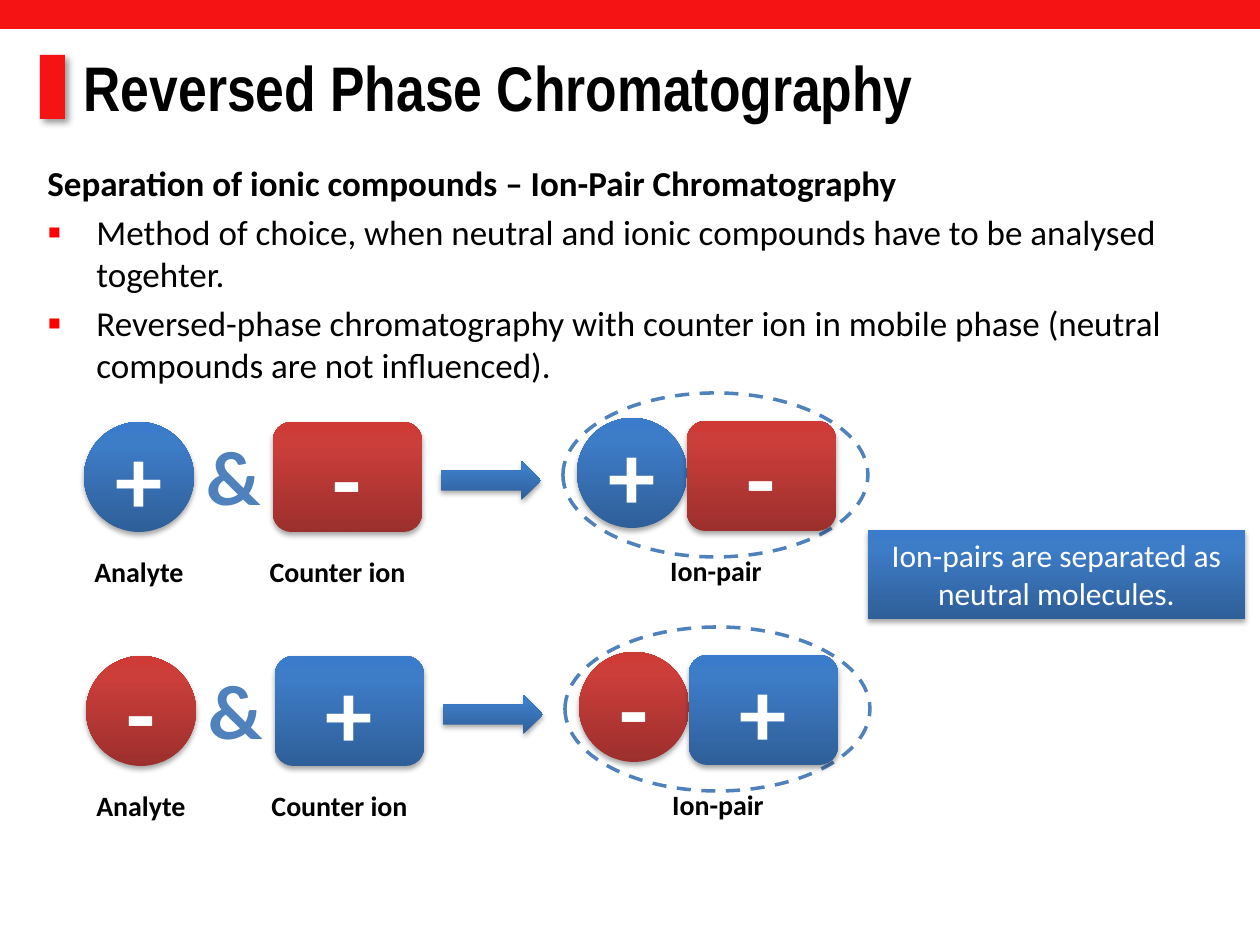
from pptx import Presentation, util as u
from pptx.dml.color import RGBColor
from pptx.enum import dml, shapes, text
from pptx.oxml import ns
from lxml import etree

RED = RGBColor(0xF5, 0x13, 0x13)
BULLET_RED = RGBColor(0xFF, 0x00, 0x00)
BLACK = RGBColor(0x00, 0x00, 0x00)
WHITE = RGBColor(0xFF, 0xFF, 0xFF)
BLUE = RGBColor(0x4F, 0x81, 0xBD)
BLUE_STOPS = (
    (0, RGBColor(0x2F, 0x5F, 0x99)),
    (80, RGBColor(0x3D, 0x7C, 0xC7)),
    (100, RGBColor(0x3A, 0x7C, 0xCB)),
)
RED_STOPS = (
    (0, RGBColor(0x9C, 0x2F, 0x2D)),
    (80, RGBColor(0xCB, 0x3E, 0x3A)),
    (100, RGBColor(0xCE, 0x3B, 0x37)),
)
POSITIVE = ("+", BLUE_STOPS)
NEGATIVE = ("-", RED_STOPS)
SHAPE = shapes.MSO_SHAPE
CENTER = text.PP_ALIGN.CENTER
LEFT = text.PP_ALIGN.LEFT


def px(length):
    """Turn whole pixels into EMU."""
    return u.Emu(round(length * 914400 / 126))


def add_element(parent, tag, **attributes):
    """Append a drawing element with the given attributes."""
    element = etree.SubElement(parent, ns.qn(tag))
    for name, value in attributes.items():
        element.set(name, str(value))
    return element


def write(frame, words, size, color, bold=True, align=CENTER, font="Calibri"):
    """Fill a text frame with evenly formatted paragraphs."""
    frame.text = words
    frame.word_wrap = True
    for para in frame.paragraphs:
        para.alignment = align
        for span in para.runs:
            span.font.name = font
            span.font.size = u.Pt(size)
            span.font.bold = bold
            span.font.color.rgb = color


def add_text(page, box, words, size, color, **style):
    """Place a text box and write into it."""
    frame = page.shapes.add_textbox(*map(px, box)).text_frame
    write(frame, words, size, color, **style)
    return frame


def add_plain(page, kind, box):
    """Place a preset shape without line, fill or shadow."""
    shape = page.shapes.add_shape(kind, *map(px, box))
    shape.shadow.inherit = False
    shape.fill.background()
    shape.line.fill.background()
    return shape


def add_shadow(shape, opacity, blur, distance, angle):
    """Give a shape a soft black outer shadow."""
    effects = shape.element.spPr.find(ns.qn("a:effectLst"))
    shadow = add_element(effects, "a:outerShdw", blurRad=u.Pt(blur), dist=u.Pt(distance),
                         dir=angle * 60000, algn="ctr", rotWithShape=0)
    color = add_element(shadow, "a:srgbClr", val=BLACK)
    add_element(color, "a:alpha", val=opacity * 1000)


def add_glossy(page, kind, box, stops):
    """Place a shape with a vertical gradient and a shadow below."""
    shape = add_plain(page, kind, box)
    shape.fill.gradient()
    shape.fill.gradient_angle = 90
    stop_list = shape.element.spPr.find(".//" + ns.qn("a:gsLst"))
    stop_list.clear()
    for position, color in stops:
        stop = add_element(stop_list, "a:gs", pos=position * 1000)
        add_element(stop, "a:srgbClr", val=color)
    add_shadow(shape, 35, 3.1, 1.8, 90)
    return shape


def add_ion(page, kind, box, charge):
    """Place an ion that carries its charge sign."""
    sign, stops = charge
    frame = add_glossy(page, kind, box, stops).text_frame
    write(frame, sign, 54, WHITE)
    frame.vertical_anchor = text.MSO_ANCHOR.MIDDLE


def add_header(page, box):
    """Draw the top band, the marker and the title."""
    left, top, width, height = box
    marker = add_plain(page, SHAPE.RECTANGLE, (left + 40, top + 55, 25, 64))
    band = add_plain(page, SHAPE.RECTANGLE, (left, top, width, 29))
    for bar in (marker, band):
        bar.fill.solid()
        bar.fill.fore_color.rgb = RED
    add_shadow(marker, 40, 4, 3, 45)
    title = page.shapes.title
    title.left, title.top = px(left + 71), px(top + 42)
    title.width, title.height = px(width - 113), px(height - 42)
    write(title.text_frame, "Reversed Phase Chromatography", 36, BLACK,
          align=LEFT, font="Arial Narrow")
    title.text_frame.vertical_anchor = text.MSO_ANCHOR.MIDDLE


def add_body(page, box):
    """Write the bold lead line and its square bullets."""
    lines = (
        "Separation of ionic compounds – Ion-Pair Chromatography",
        "Method of choice, when neutral and ionic compounds have to be analysed togehter.",
        "Reversed-phase chromatography with counter ion in mobile phase "
        "(neutral compounds are not influenced).",
    )
    frame = add_text(page, box, "\n".join(lines), 20, BLACK, align=LEFT)
    for para in frame.paragraphs[1:]:
        properties = para._p.get_or_add_pPr()
        properties.set("marL", str(px(49)))
        properties.set("indent", str(px(-49)))
        color = add_element(properties, "a:buClr")
        add_element(color, "a:srgbClr", val=BULLET_RED)
        add_element(properties, "a:buSzPct", val=115000)
        add_element(properties, "a:buFont", typeface="Arial")
        add_element(properties, "a:buChar", char="▪")
        para.space_before = u.Pt(4)
        para.runs[0].font.bold = False


def add_pairing(page, box, analyte, counter):
    """Draw one row: analyte and counter ion forming an ion pair."""
    left, top, width, height = box

    def at(x, y, w, h):
        """Shift a relative box to the row's corner."""
        return left + x, top + y, w, h

    add_ion(page, SHAPE.OVAL, at(0, 29, 110, 110), analyte)
    add_ion(page, SHAPE.OVAL, at(493, 25, 110, 110), analyte)
    ring = add_plain(page, SHAPE.OVAL, at(width - 305, 0, 305, 164))
    ring.line.color.rgb = BLUE
    ring.line.width = u.Pt(2)
    ring.line.dash_style = dml.MSO_LINE.DASH
    labels = (("Analyte", -59, 155, 228), ("Counter ion", 169, 155, 169),
              ("Ion-pair", 518, 154, 228))
    for words, x, y, label_width in labels:
        add_text(page, at(x, y, label_width, height - 155), words, 16, BLACK)
    add_text(page, at(110, 29, 118, 106), "&", 44, BLUE, align=LEFT)
    add_glossy(page, SHAPE.RIGHT_ARROW, at(357, 68, 100, 39), BLUE_STOPS)
    add_ion(page, SHAPE.ROUNDED_RECTANGLE, at(189, 29, 149, 110), counter)
    add_ion(page, SHAPE.ROUNDED_RECTANGLE, at(603, 28, 149, 110), counter)


def add_callout(page, box):
    """Draw the concluding note."""
    frame = add_glossy(page, SHAPE.RECTANGLE, box, BLUE_STOPS).text_frame
    write(frame, "Ion-pairs are separated as neutral molecules.", 18, WHITE, bold=False)
    frame.vertical_anchor = text.MSO_ANCHOR.TOP


def main():
    """Build the slide and save the deck."""
    deck = Presentation()
    deck.slide_width, deck.slide_height = px(1260), px(945)
    page = deck.slides.add_slide(deck.slide_layouts[5])
    add_header(page, (0, 0, 1260, 131))
    add_body(page, (35, 155, 1182, 258))
    add_pairing(page, (84, 393, 784, 202), POSITIVE, NEGATIVE)
    add_callout(page, (868, 530, 377, 89))
    add_pairing(page, (86, 627, 784, 202), NEGATIVE, POSITIVE)
    deck.save("out.pptx")


if __name__ == "__main__":
    main()
